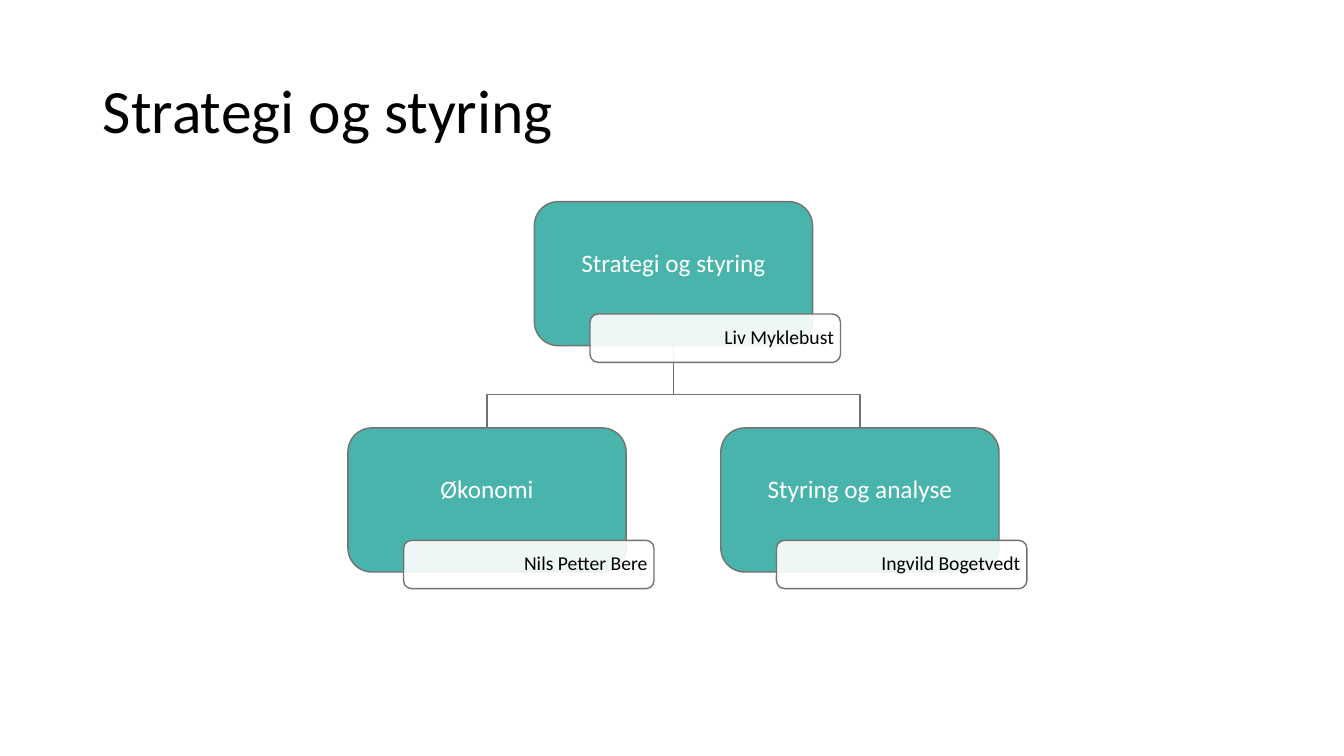
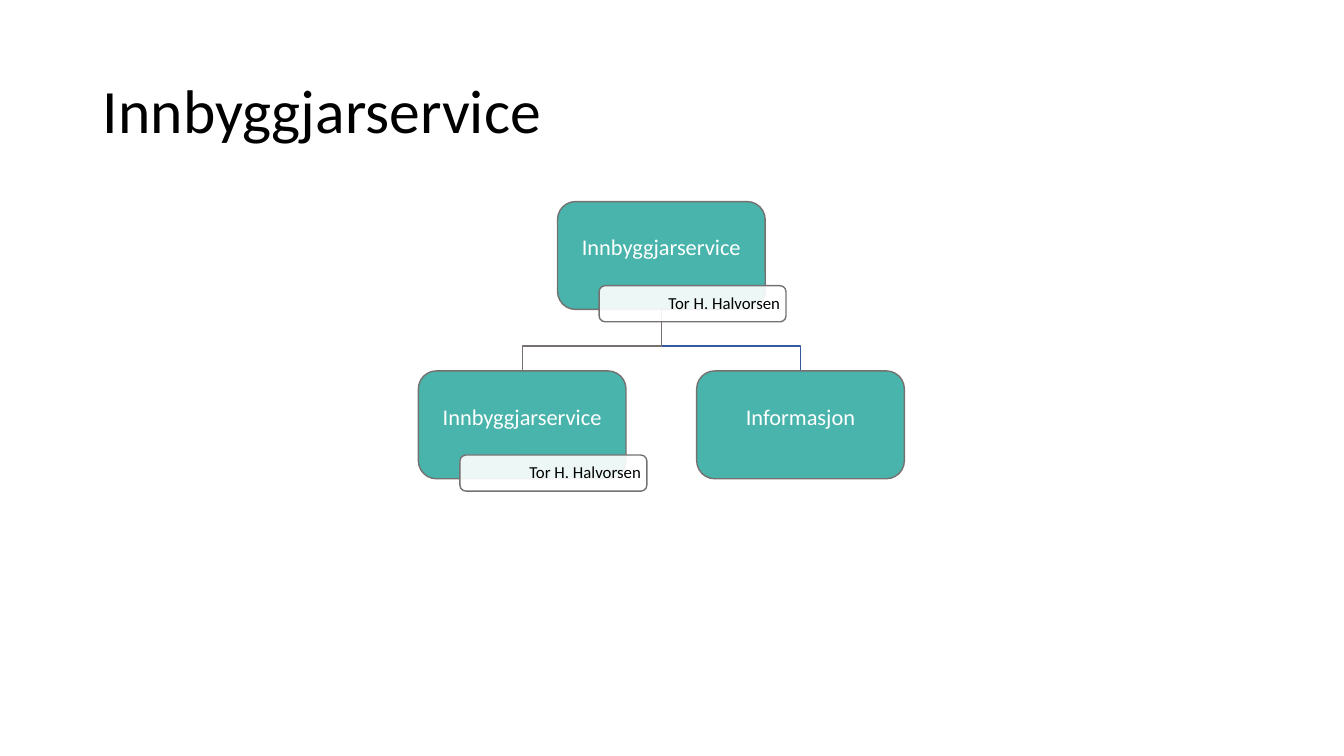
from lxml.etree import Element, SubElement
from pptx import Presentation
from pptx.dml.color import RGBColor
from pptx.enum.shapes import MSO_SHAPE
from pptx.enum.text import MSO_ANCHOR, PP_ALIGN
from pptx.oxml.ns import qn
from pptx.util import Inches, Pt

COLORS = {"teal": "48B4AB", "gray": "767171", "blue": "365B9D",
          "white": "FFFFFF", "black": "000000"}
FONT = "Calibri"

# Each chart: title, centre x, box size, text sizes, head, children.
# A head or child is (unit, leader, colour of the line leading to it).
CHARTS = [
    {"title": "Strategi og styring", "center": 6.68, "w": 2.76, "h": 1.43,
     "unit_size": 18, "leader_size": 14,
     "head": ("Strategi og styring", "Liv Myklebust", None),
     "children": [("Økonomi", "Nils Petter Bere", "gray"),
                  ("Styring og analyse", "Ingvild Bogetvedt", "gray")]},
    {"title": "Innbyggjarservice", "center": 6.56, "w": 2.06, "h": 1.07,
     "unit_size": 16, "leader_size": 12,
     "head": ("Innbyggjarservice", "Tor H. Halvorsen", None),
     "children": [("Innbyggjarservice", "Tor H. Halvorsen", "gray"),
                  ("Informasjon", None, "blue")]},
]
TOP = 2.0
# Proportions relative to the box width or height
COL_STEP, ROW_STEP, ELBOW = 1.34, 1.57, 1.34
TAG_X, TAG_Y, TAG_W, TAG_H = 0.2, 0.78, 0.9, 0.335


def rgb(name):
    return RGBColor.from_string(COLORS[name])


def add_round_box(s, x, y, w, h, text, size, fill, color, align, side, bottom):
    """Add an outlined rounded box with one line of text; side and bottom are insets."""
    sp = s.shapes.add_shape(MSO_SHAPE.ROUNDED_RECTANGLE,
                            Inches(x), Inches(y), Inches(w), Inches(h))
    sp.shadow.inherit = False
    sp.fill.solid()
    sp.fill.fore_color.rgb = rgb(fill)
    sp.line.color.rgb = rgb("gray")
    sp.line.width = Pt(1)
    tf = sp.text_frame
    tf.word_wrap = True
    tf.vertical_anchor = MSO_ANCHOR.MIDDLE
    tf.margin_left = tf.margin_right = Inches(side)
    tf.margin_top, tf.margin_bottom = Inches(0.01), Inches(bottom)
    p = tf.paragraphs[0]
    p.alignment = align
    p.line_spacing = 0.9
    r = p.add_run()
    r.text = text
    r.font.name, r.font.size = FONT, Pt(size)
    r.font.color.rgb = rgb(color)
    return sp


prs = Presentation()
prs.slide_width, prs.slide_height = Inches(13.33), Inches(7.5)

# Shared title style
layout = prs.slide_layouts[5]
title = layout.placeholders[0]
title.left, title.top = Inches(0.92), Inches(0.4)
title.width, title.height = Inches(11.5), Inches(1.45)
title_style = prs.slide_master.element.find(".//" + qn("p:titleStyle"))
level = title_style.find(qn("a:lvl1pPr"))
level.set("algn", "l")
spacing = Element(qn("a:lnSpc"))
SubElement(spacing, qn("a:spcPct"), val="90000")
level.insert(0, spacing)

for chart in CHARTS:
    s = prs.slides.add_slide(layout)
    p = s.shapes.title.text_frame.paragraphs[0]
    r = p.add_run()
    r.text = chart["title"]
    r.font.name, r.font.size = FONT, Pt(44)
    r.font.color.rgb = rgb("black")

    w, h, center = chart["w"], chart["h"], chart["center"]
    row = TOP + ROW_STEP * h
    middle = (len(chart["children"]) - 1) / 2
    nodes = [(center, TOP, chart["head"])]
    for i, child in enumerate(chart["children"]):
        nodes.append((center + (i - middle) * COL_STEP * w, row, child))

    # Lines from the head down to each child, behind the boxes
    bend = TOP + ELBOW * h
    for x, y, (unit, leader, line_color) in reversed(nodes[1:]):
        path = s.shapes.build_freeform(Inches(center), Inches(TOP + h))
        path.add_line_segments([(Inches(center), Inches(bend)),
                                (Inches(x), Inches(bend)),
                                (Inches(x), Inches(y))], close=False)
        sp = path.convert_to_shape()
        sp.shadow.inherit = False
        sp.fill.background()
        sp.line.color.rgb = rgb(line_color)
        sp.line.width = Pt(1)

    for x, y, (unit, leader, line_color) in nodes:
        left = x - w / 2
        add_round_box(s, left, y, w, h, unit, chart["unit_size"],
                      "teal", "white", PP_ALIGN.CENTER, 0.01, 0.14 * h)
        if leader:
            tag = add_round_box(s, left + TAG_X * w, y + TAG_Y * h, TAG_W * w, TAG_H * h,
                                leader, chart["leader_size"],
                                "white", "black", PP_ALIGN.RIGHT, 0.04, 0.01)
            fill_color = tag.fill._xPr.find(".//" + qn("a:srgbClr"))
            SubElement(fill_color, qn("a:alpha"), val="90000")

prs.save("out.pptx")
